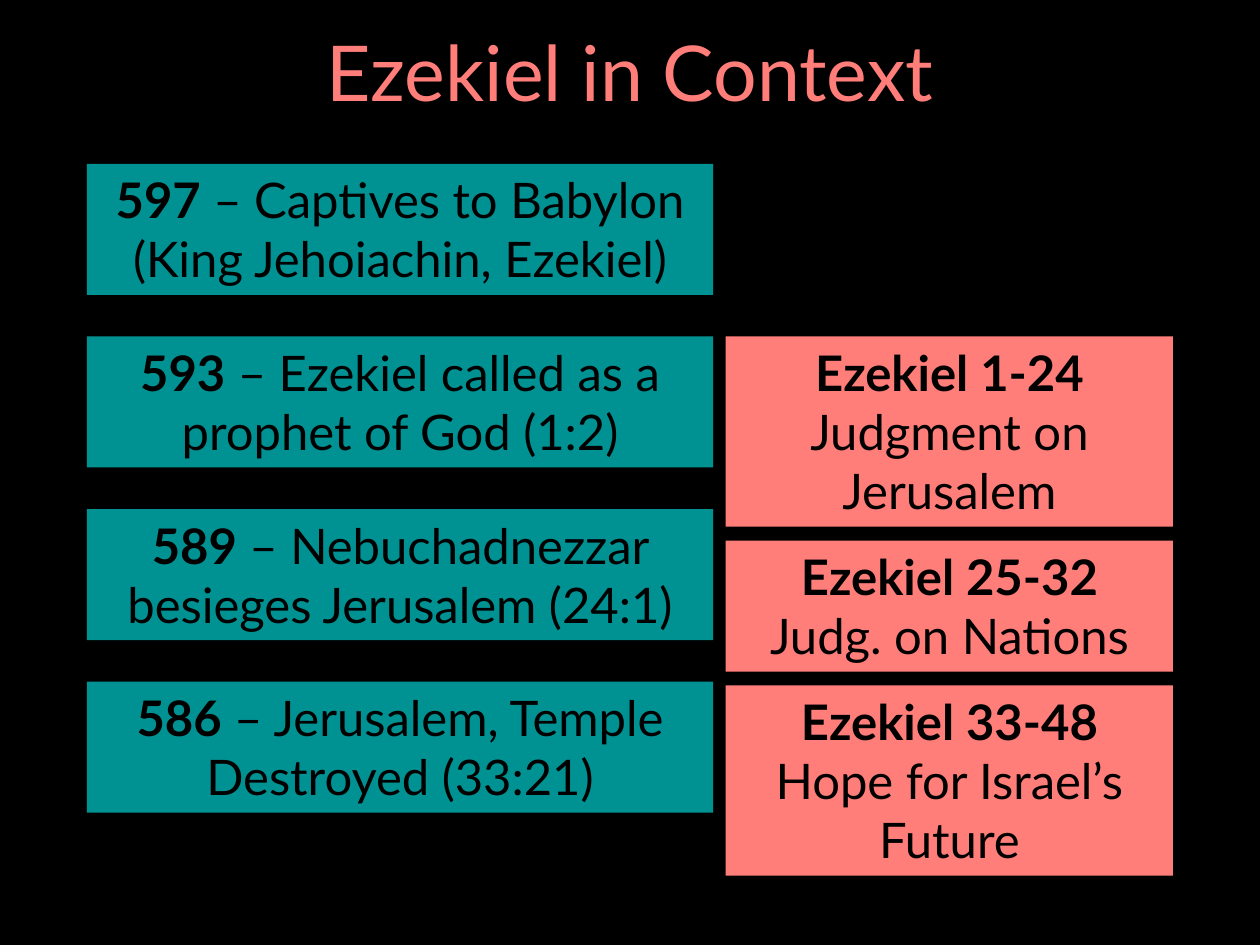
from dataclasses import dataclass

from pptx import Presentation
from pptx import util as u
from pptx.dml.color import RGBColor
from pptx.enum import shapes, text


@dataclass(frozen=True)
class Theme:
    background: str = "000000"
    ink: str = "000000"
    event: str = "009193"
    accent: str = "FF7E79"
    font: str = "Lato"
    title_size: int = 44
    body_size: int = 28


@dataclass(frozen=True)
class Column:
    left: float
    width: float
    top: float
    gap: float
    fill: str


@dataclass(frozen=True)
class Entry:
    heading: str
    detail: str
    lines: int = 2
    same_line: bool = False


THEME = Theme()
WIDTH, HEIGHT = 10, 7.5
MARGIN = 0.69
LINE_HEIGHT, PADDING = 0.47, 0.1
EVENT_TOP, EVENT_GAP = 1.3, 0.33
SECOND_ROW = EVENT_TOP + 2 * LINE_HEIGHT + PADDING + EVENT_GAP

EVENT_COLUMN = Column(MARGIN, 4.97, EVENT_TOP, EVENT_GAP, THEME.event)
BOOK_COLUMN = Column(5.76, 3.55, SECOND_ROW, 0.11, THEME.accent)

EVENTS = [
    Entry("597", " – Captives to Babylon (King Jehoiachin, Ezekiel)", same_line=True),
    Entry("593", " – Ezekiel called as a prophet of God (1:2)", same_line=True),
    Entry("589", " – Nebuchadnezzar besieges Jerusalem (24:1)", same_line=True),
    Entry("586", " – Jerusalem, Temple Destroyed (33:21)", same_line=True),
]
BOOK_PARTS = [
    Entry("Ezekiel 1-24", "Judgment on Jerusalem", lines=3),
    Entry("Ezekiel 25-32", "Judg. on Nations"),
    Entry("Ezekiel 33-48", "Hope for Israel’s Future", lines=3),
]


def add_span(para, words: str, *, size: int = THEME.body_size,
             color: str = THEME.ink, bold: bool = False) -> None:
    para.alignment = text.PP_ALIGN.CENTER
    span = para.add_run()
    span.text = words
    span.font.name = THEME.font
    span.font.size = u.Pt(size)
    span.font.bold = bold
    span.font.color.rgb = RGBColor.from_string(color)


def add_title(page, words: str) -> None:
    title = page.shapes.title
    title.left, title.top = u.Inches(MARGIN), u.Inches(0.16)
    title.width, title.height = u.Inches(WIDTH - 2 * MARGIN), u.Inches(0.9)
    frame = title.text_frame
    frame.auto_size = text.MSO_AUTO_SIZE.NONE
    frame.vertical_anchor = text.MSO_ANCHOR.MIDDLE
    para = frame.paragraphs[0]
    para.line_spacing = 0.9
    add_span(para, words, size=THEME.title_size, color=THEME.accent)


def add_box(page, column: Column, top: float, height: float, entry: Entry) -> None:
    box = page.shapes.add_shape(
        shapes.MSO_SHAPE.RECTANGLE,
        *map(u.Inches, (column.left, top, column.width, height)))
    box.shadow.inherit = False
    box.fill.solid()
    box.fill.fore_color.rgb = RGBColor.from_string(column.fill)
    box.line.fill.background()
    frame = box.text_frame
    frame.word_wrap = True
    frame.auto_size = text.MSO_AUTO_SIZE.SHAPE_TO_FIT_TEXT
    frame.vertical_anchor = text.MSO_ANCHOR.TOP
    para = frame.paragraphs[0]
    add_span(para, entry.heading, bold=True)
    add_span(para if entry.same_line else frame.add_paragraph(), entry.detail)


def add_stack(page, column: Column, entries: list[Entry]) -> None:
    """Stack boxes down a column, each as tall as its lines of text."""
    top = column.top
    for entry in entries:
        height = entry.lines * LINE_HEIGHT + PADDING
        add_box(page, column, top, height, entry)
        top += height + column.gap


def main() -> None:
    deck = Presentation()
    deck.slide_width, deck.slide_height = u.Inches(WIDTH), u.Inches(HEIGHT)
    title_only = deck.slide_layouts.get_by_name("Title Only")
    page = deck.slides.add_slide(title_only)
    page.background.fill.solid()
    page.background.fill.fore_color.rgb = RGBColor.from_string(THEME.background)
    add_title(page, "Ezekiel in Context")
    add_stack(page, EVENT_COLUMN, EVENTS)
    add_stack(page, BOOK_COLUMN, BOOK_PARTS)
    deck.save("out.pptx")


if __name__ == "__main__":
    main()
